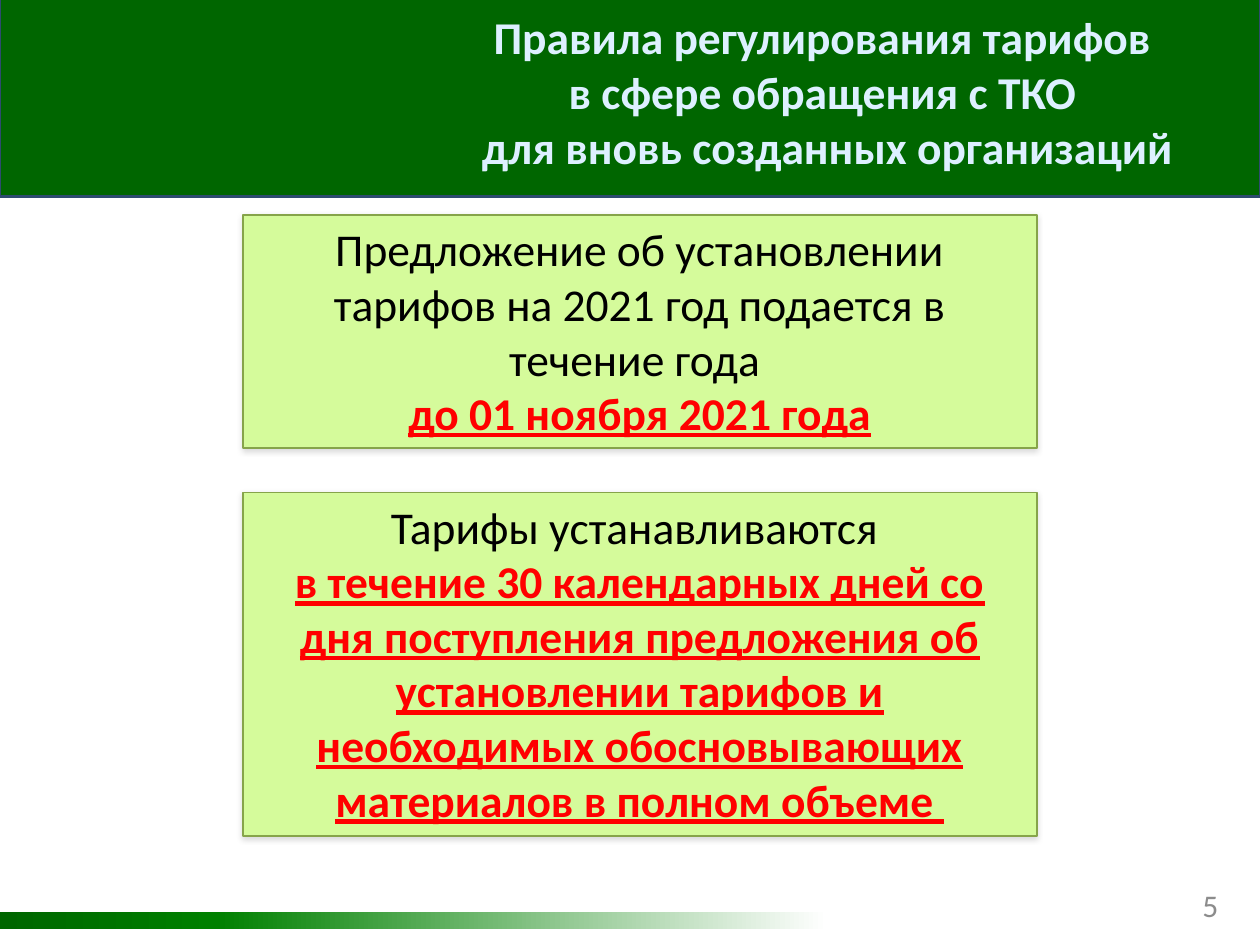
import copy

import pptx
import pptx.dml.color
import pptx.enum.shapes
import pptx.enum.text
import pptx.oxml
import pptx.oxml.ns
import pptx.util
from pptx.util import Cm

RECTANGLE = pptx.enum.shapes.MSO_SHAPE.RECTANGLE
ALIGN = pptx.enum.text.PP_ALIGN
ANCHOR = pptx.enum.text.MSO_ANCHOR
AUTO_SIZE = pptx.enum.text.MSO_AUTO_SIZE


def rgb(hex_code):
    return pptx.dml.color.RGBColor.from_string(hex_code)


def format_paragraph(paragraph, size, color, align, strong=False, underline=False):
    paragraph.alignment = align
    paragraph.font.name = "Calibri"
    paragraph.font.size = pptx.util.Pt(size)
    paragraph.font.color.rgb = rgb(color)
    paragraph.font.bold = strong
    paragraph.font.underline = underline


presentation = pptx.Presentation()
presentation.slide_width = Cm(25.4)
presentation.slide_height = Cm(19.05)
slide = presentation.slides.add_slide(presentation.slide_layouts[5])

# Title on the header band
title = slide.shapes.title
title.left, title.top, title.width, title.height = Cm(7.29), Cm(0.74), Cm(18.8), Cm(2.2)
title.text_frame.text = (
    "Правила регулирования тарифов \n"
    "в сфере обращения с ТКО \n"
    "для вновь созданных организаций"
)
title.text_frame.auto_size = AUTO_SIZE.NONE
title.text_frame.vertical_anchor = ANCHOR.MIDDLE
for paragraph in title.text_frame.paragraphs:
    format_paragraph(paragraph, 26, "DDF0FF", ALIGN.CENTER, strong=True)

header = slide.shapes.add_shape(RECTANGLE, 0, Cm(-0.08), Cm(25.4), Cm(4.04))
header.shadow.inherit = False
header.fill.solid()
header.fill.fore_color.rgb = rgb("006600")
header.line.color.rgb = rgb("2E4B6F")
header.line.width = pptx.util.Pt(1.5)
title.element.addprevious(header.element)

# Footer strip fading to white
footer = slide.shapes.add_shape(RECTANGLE, 0, Cm(18.39), Cm(16.69), Cm(0.33))
footer.shadow.inherit = False
footer.line.fill.background()
footer.fill.gradient()
footer.fill.gradient_angle = 0
stop_list = footer.element.spPr.find(".//" + pptx.oxml.ns.qn("a:gsLst"))
stop_list.append(copy.deepcopy(stop_list[0]))
fade = [(0, "006600"), (0.26, "008000"), (1, "FFFFFF")]
for stop, (position, color) in zip(footer.fill.gradient_stops, fade):
    stop.position = position
    stop.color.rgb = rgb(color)

page_number = slide.shapes.add_textbox(Cm(23.29), Cm(17.73), Cm(1.52), Cm(1.02))
page_number.text_frame.word_wrap = True
page_number.text_frame.vertical_anchor = ANCHOR.MIDDLE
page_number.text_frame.text = "5"
format_paragraph(page_number.text_frame.paragraphs[0], 18, "8C8C8C", ALIGN.RIGHT)

# Rules: top, height, plain statement, underlined deadline
rules = [
    (4.34, 4.7,
     "Предложение об установлении тарифов на 2021 год подается в течение года ",
     "до 01 ноября 2021 года"),
    (9.93, 6.93,
     "Тарифы устанавливаются ",
     "в течение 30 календарных дней со дня поступления предложения об установлении "
     "тарифов и необходимых обосновывающих материалов в полном объеме "),
]
SOFT_SHADOW = (
    f'<a:outerShdw {pptx.oxml.ns.nsdecls("a")} blurRad="38100" dist="12700" dir="5400000" '
    'rotWithShape="0"><a:srgbClr val="000000"><a:alpha val="15000"/></a:srgbClr></a:outerShdw>'
)
for top, height, statement, deadline in rules:
    rule = slide.shapes.add_shape(RECTANGLE, Cm(4.9), Cm(top), Cm(16), Cm(height))
    rule.fill.solid()
    rule.fill.fore_color.rgb = rgb("D5FB9B")
    rule.line.color.rgb = rgb("86A44A")
    rule.line.width = pptx.util.Pt(1)
    rule.shadow.inherit = False
    effects = rule.element.spPr.find(pptx.oxml.ns.qn("a:effectLst"))
    effects.append(pptx.oxml.parse_xml(SOFT_SHADOW))

    frame = rule.text_frame
    frame.word_wrap = True
    frame.auto_size = AUTO_SIZE.SHAPE_TO_FIT_TEXT
    frame.vertical_anchor = ANCHOR.TOP
    frame.text = f"{statement}\n{deadline}"
    format_paragraph(frame.paragraphs[0], 26, "000000", ALIGN.CENTER)
    format_paragraph(frame.paragraphs[1], 26, "FF0000", ALIGN.CENTER, strong=True, underline=True)

presentation.save("out.pptx")
